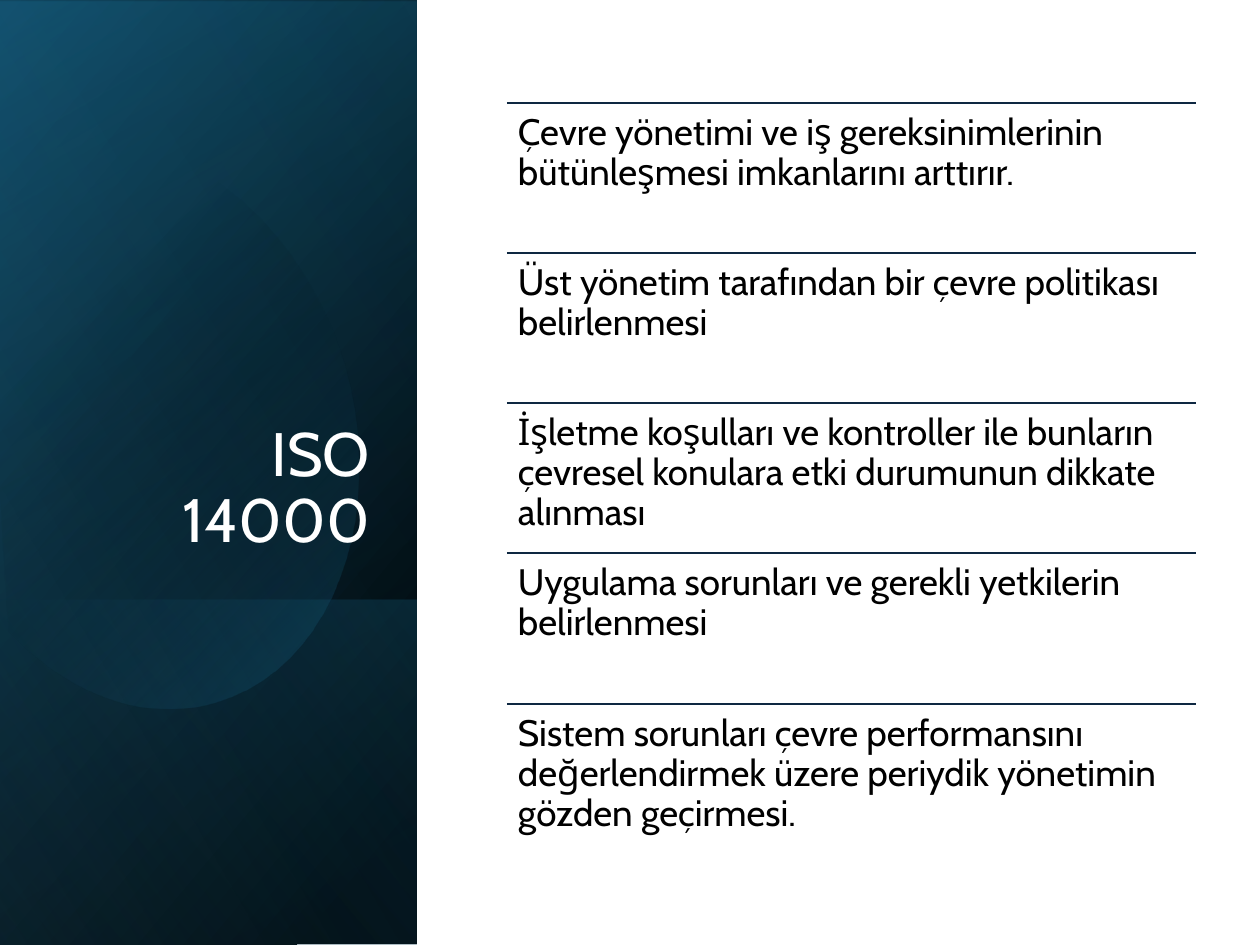
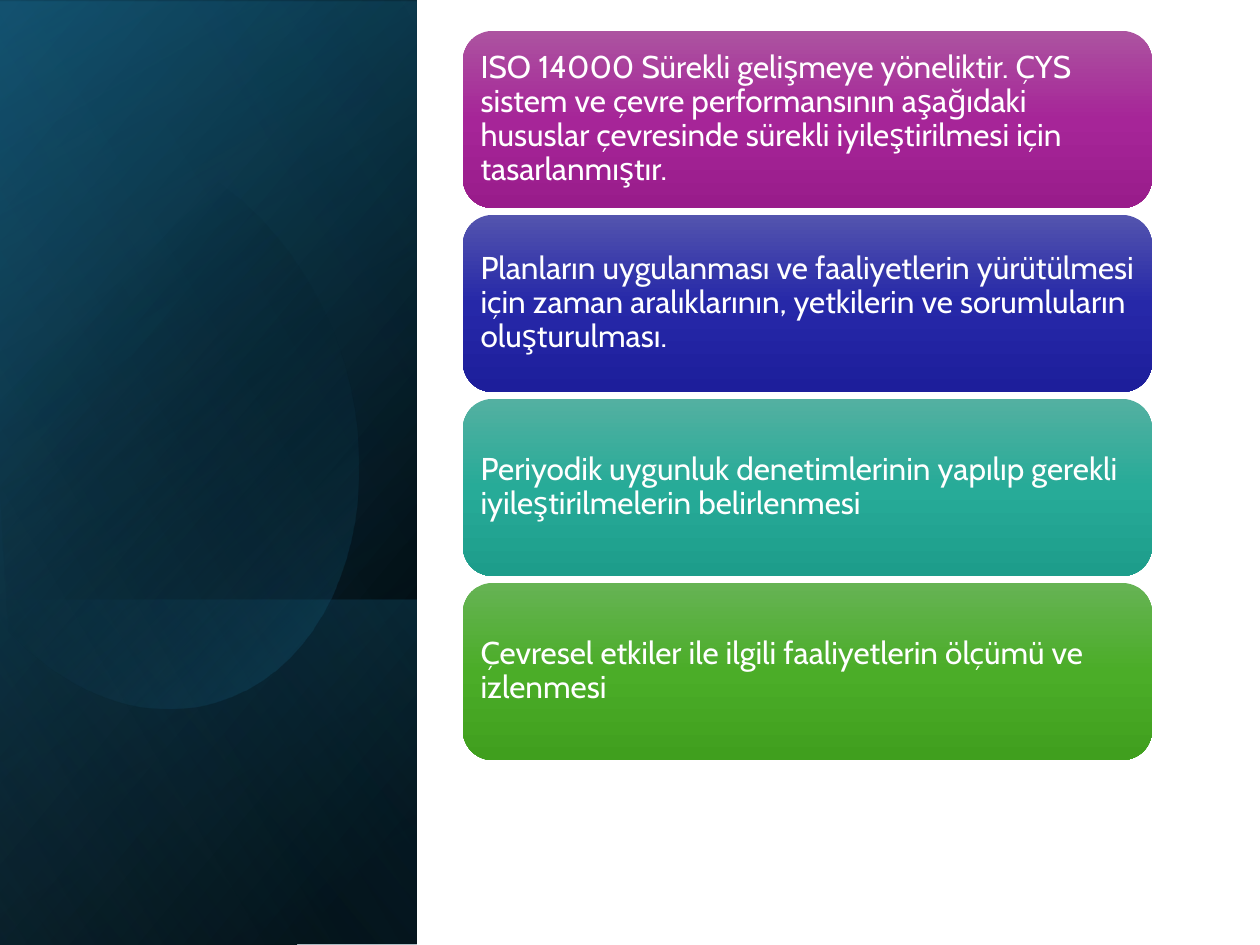
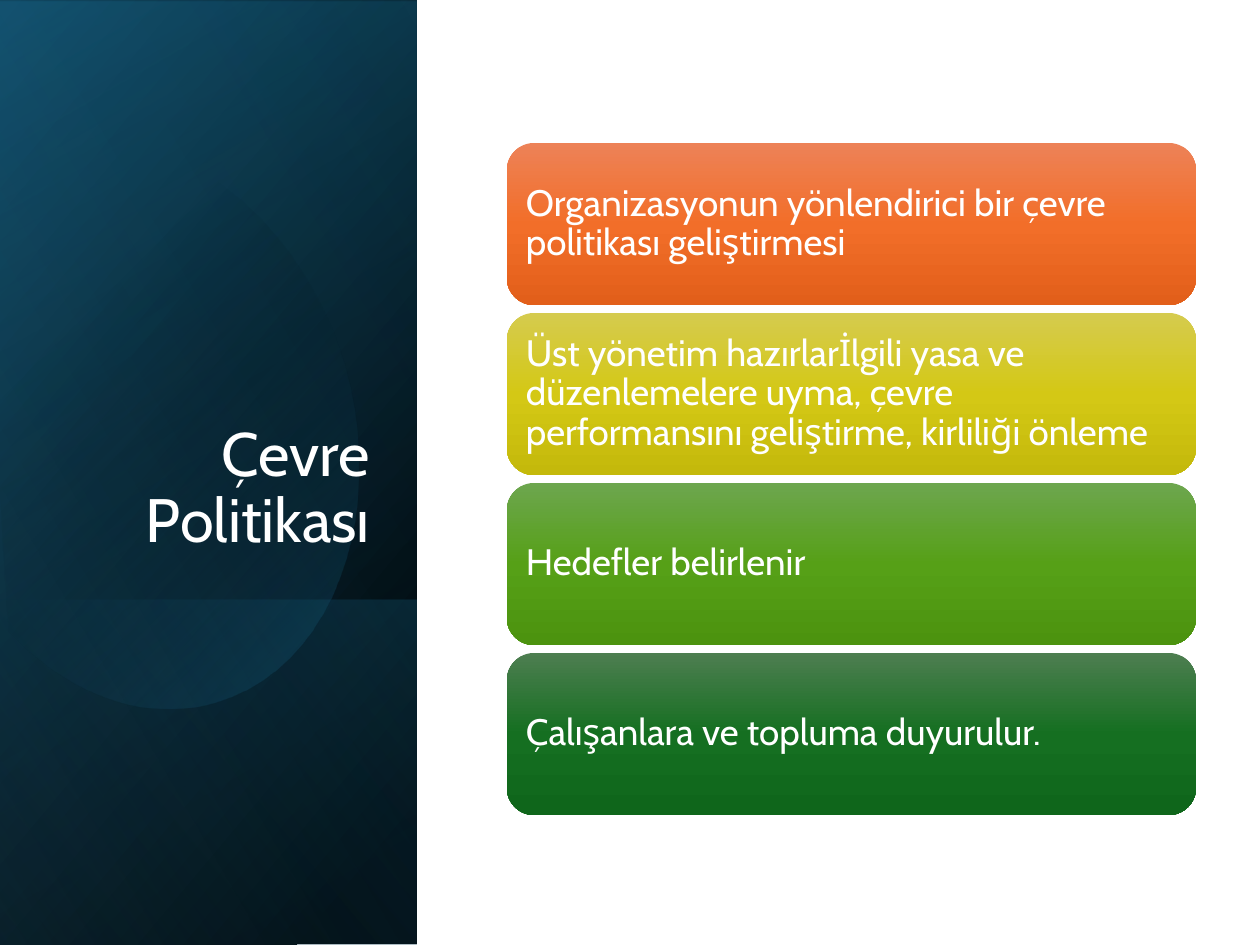
import pptx
import pptx.dml.color
import pptx.enum.shapes
import pptx.enum.text
import pptx.oxml
import pptx.oxml.ns
import pptx.util
from lxml import etree

RGBColor = pptx.dml.color.RGBColor
Shape = pptx.enum.shapes.MSO_SHAPE
Anchor = pptx.enum.text.MSO_ANCHOR
Align = pptx.enum.text.PP_ALIGN
qn = pptx.oxml.ns.qn

PX = 914400 / 126
FONT = "Cabin"
BLACK = RGBColor(0x00, 0x00, 0x00)
WHITE = RGBColor(0xFF, 0xFF, 0xFF)
NAVY = RGBColor(0x0E, 0x28, 0x41)
DEEP_TEAL = RGBColor(0x10, 0x48, 0x62)
TEAL = RGBColor(0x15, 0x60, 0x82)
SKY = RGBColor(0x46, 0xB1, 0xE1)
PURPLE = [RGBColor(0xAC, 0x53, 0xA0), RGBColor(0xA6, 0x25, 0x98), RGBColor(0x99, 0x1C, 0x8B)]
INDIGO = [RGBColor(0x53, 0x54, 0xAE), RGBColor(0x26, 0x28, 0xA8), RGBColor(0x1D, 0x1E, 0x9B)]
AQUA = [RGBColor(0x53, 0xB0, 0xA1), RGBColor(0x27, 0xAB, 0x98), RGBColor(0x1D, 0x9D, 0x8B)]
LIME = [RGBColor(0x66, 0xB3, 0x54), RGBColor(0x4B, 0xAD, 0x28), RGBColor(0x40, 0x9F, 0x1E)]
ORANGE = [RGBColor(0xED, 0x82, 0x57), RGBColor(0xF2, 0x6E, 0x29), RGBColor(0xE2, 0x5F, 0x1A)]
YELLOW = [RGBColor(0xD5, 0xCB, 0x4E), RGBColor(0xD4, 0xC8, 0x15), RGBColor(0xC4, 0xB9, 0x0B)]
GREEN = [RGBColor(0x6D, 0xA6, 0x4E), RGBColor(0x56, 0xA0, 0x17), RGBColor(0x4C, 0x93, 0x0F)]
FOREST = [RGBColor(0x4D, 0x7E, 0x50), RGBColor(0x15, 0x6F, 0x21), RGBColor(0x0F, 0x66, 0x1B)]

# Side panel layers: left, top, width, height, angle, stops (position, colour, opacity)
PANEL_BASE = [
    (-264, 263, 945, 417, 50, [(8, BLACK, 100), (100, DEEP_TEAL, 100)]),
    (-264, 266, 945, 417, 30, [(0, BLACK, 0), (99, TEAL, 46)]),
    (36, 564, 345, 417, 130, [(2, TEAL, 29), (100, BLACK, 30)]),
]
PANEL_GLOW = [(-264, 263, 945, 417, 120, [(0, BLACK, 0), (99, SKY, 11)])]

# Outline of the oval as cubic curves; a straight edge joins the two ends on the left
OVAL_START = (121, 144)
OVAL_CURVES = [
    [(215, 154), (307, 242), (344, 365)],
    [(387, 519), (330, 669), (215, 702)],
    [(144, 723), (67, 693), (9, 630)],
    [(-4, 615), (-31, 209), (-19, 194)],
    [(3, 173), (28, 158), (57, 149)],
    [(78, 142), (100, 141), (121, 144)],
]

ISO_POINTS = [
    "Çevre yönetimi ve iş gereksinimlerinin bütünleşmesi imkanlarını arttırır.",
    "Üst yönetim tarafından bir çevre politikası belirlenmesi",
    "İşletme koşulları ve kontroller ile bunların çevresel konulara etki durumunun dikkate alınması",
    "Uygulama sorunları ve gerekli yetkilerin belirlenmesi",
    "Sistem sorunları çevre performansını değerlendirmek üzere periydik yönetimin gözden geçirmesi.",
]
IMPROVEMENT_CARDS = [
    (PURPLE, "ISO 14000 Sürekli gelişmeye yöneliktir. ÇYS sistem ve çevre performansının "
             "aşağıdaki hususlar çevresinde sürekli iyileştirilmesi için tasarlanmıştır."),
    (INDIGO, "Planların uygulanması ve faaliyetlerin yürütülmesi için zaman aralıklarının, "
             "yetkilerin ve sorumluların oluşturulması."),
    (AQUA, "Periyodik uygunluk denetimlerinin yapılıp gerekli iyileştirilmelerin belirlenmesi"),
    (LIME, "Çevresel etkiler ile ilgili faaliyetlerin ölçümü ve izlenmesi"),
]
POLICY_CARDS = [
    (ORANGE, "Organizasyonun yönlendirici bir çevre politikası geliştirmesi"),
    (YELLOW, "Üst yönetim hazırlarİlgili yasa ve düzenlemelere uyma, çevre performansını "
             "geliştirme, kirliliği önleme"),
    (GREEN, "Hedefler belirlenir"),
    (FOREST, "Çalışanlara ve topluma duyurulur."),
]


def paint_gradient(shape, stops, angle):
    """Fill a shape with a linear gradient and drop its line and shadow."""
    shape.shadow.inherit = False
    shape.line.fill.background()
    shape.fill.background()
    gradient = pptx.oxml.parse_xml(
        f'<a:gradFill {pptx.oxml.ns.nsdecls("a")} rotWithShape="1"><a:gsLst/>'
        f'<a:lin ang="{angle * 60000}" scaled="0"/></a:gradFill>')
    for position, colour, opacity in stops:
        stop = etree.SubElement(gradient[0], qn("a:gs"), pos=str(position * 1000))
        tone = etree.SubElement(stop, qn("a:srgbClr"), val=str(colour))
        if opacity < 100:
            etree.SubElement(tone, qn("a:alpha"), val=str(opacity * 1000))
    properties = shape._element.spPr
    properties.replace(properties.find(qn("a:noFill")), gradient)


def write_text(shape, text, size, colour, margins, anchor, align=Align.LEFT):
    """Write one wrapped paragraph; margins are left, top, right, bottom in px."""
    frame = shape.text_frame
    frame.word_wrap = True
    frame.auto_size = pptx.enum.text.MSO_AUTO_SIZE.NONE
    frame.vertical_anchor = anchor
    (frame.margin_left, frame.margin_top,
     frame.margin_right, frame.margin_bottom) = [round(m * PX) for m in margins]
    para = frame.paragraphs[0]
    para.text = text
    para.alignment = align
    para.line_spacing = 0.9
    para.space_before = pptx.util.Pt(0)
    para.font.name = FONT
    para.font.size = pptx.util.Pt(size)
    para.font.color.rgb = colour


deck = pptx.Presentation()
deck.slide_width = pptx.util.Inches(10)
deck.slide_height = pptx.util.Inches(7.5)
TITLE_ONLY, BLANK = deck.slide_layouts[5], deck.slide_layouts[6]

# Points along the oval
oval_points = []
start = OVAL_START
for first, second, end in OVAL_CURVES:
    straight = end == (-19, 194)
    for step in range(1, 21):
        t = step / 20
        weights = ((1 - t) ** 3, 3 * t * (1 - t) ** 2, 3 * t * t * (1 - t), t ** 3)
        corners = (start, end) if straight else (start, first, second, end)
        if straight:
            weights = (1 - t, t)
        oval_points.append(tuple(
            round(PX * sum(w * corner[axis] for w, corner in zip(weights, corners)))
            for axis in (0, 1)))
    start = end

# Slides with the shared panel and title style
pages = []
for title_text in ("ISO 14000", None, "Çevre Politikası"):
    page = deck.slides.add_slide(TITLE_ONLY if title_text else BLANK)
    pages.append(page)
    for layers in (PANEL_BASE, PANEL_GLOW):
        for left, top, width, height, angle, stops in layers:
            layer = page.shapes.add_shape(
                Shape.RECTANGLE, *[round(v * PX) for v in (left, top, width, height)])
            layer.rotation = 90
            layer._element.spPr.get_or_add_xfrm().set("flipH", "1")
            paint_gradient(layer, stops, angle)
        if layers is PANEL_BASE:
            builder = page.shapes.build_freeform(*oval_points[-1])
            builder.add_line_segments(oval_points, close=True)
            paint_gradient(builder.convert_to_shape(), [(29, BLACK, 0), (100, TEAL, 43)], 45)
    if title_text:
        title = page.shapes.title
        title.left, title.top, title.width, title.height = [
            round(v * PX) for v in (60, 232, 323, 330)]
        write_text(title, title_text, 35, WHITE, (24, 6, 13, 6), Anchor.BOTTOM, Align.RIGHT)
        page.shapes._spTree.append(title._element)

# Slide 1: ruled list
for row, point in enumerate(ISO_POINTS):
    left, top, width, height = [round(v * PX) for v in (507, 103 + row * 601 // 4, 689, 150)]
    rule = pages[0].shapes.add_connector(
        pptx.enum.shapes.MSO_CONNECTOR.STRAIGHT, left, top, left + width, top)
    rule.line.color.rgb = NAVY
    rule.line.width = pptx.util.Pt(1)
    etree.SubElement(rule._element.spPr, qn("a:effectLst"))
    box = pages[0].shapes.add_textbox(left, top, width, height)
    write_text(box, point, 21, BLACK, (11, 11, 11, 11), Anchor.TOP)

# Slides 2 and 3: stacked cards
for page, cards, left, top, height, pitch, size, margin in (
        (pages[1], IMPROVEMENT_CARDS, 463, 31, 177, 184, 18, 9),
        (pages[2], POLICY_CARDS, 507, 143, 162, 170, 21, 11)):
    for row, (tones, text) in enumerate(cards):
        card = page.shapes.add_shape(
            Shape.ROUNDED_RECTANGLE,
            *[round(v * PX) for v in (left, top + row * pitch, 689, height)])
        paint_gradient(card, [(50 * i, tone, 100) for i, tone in enumerate(tones)], 90)
        write_text(card, text, size, WHITE, [margin] * 4, Anchor.MIDDLE)

deck.save("out.pptx")
